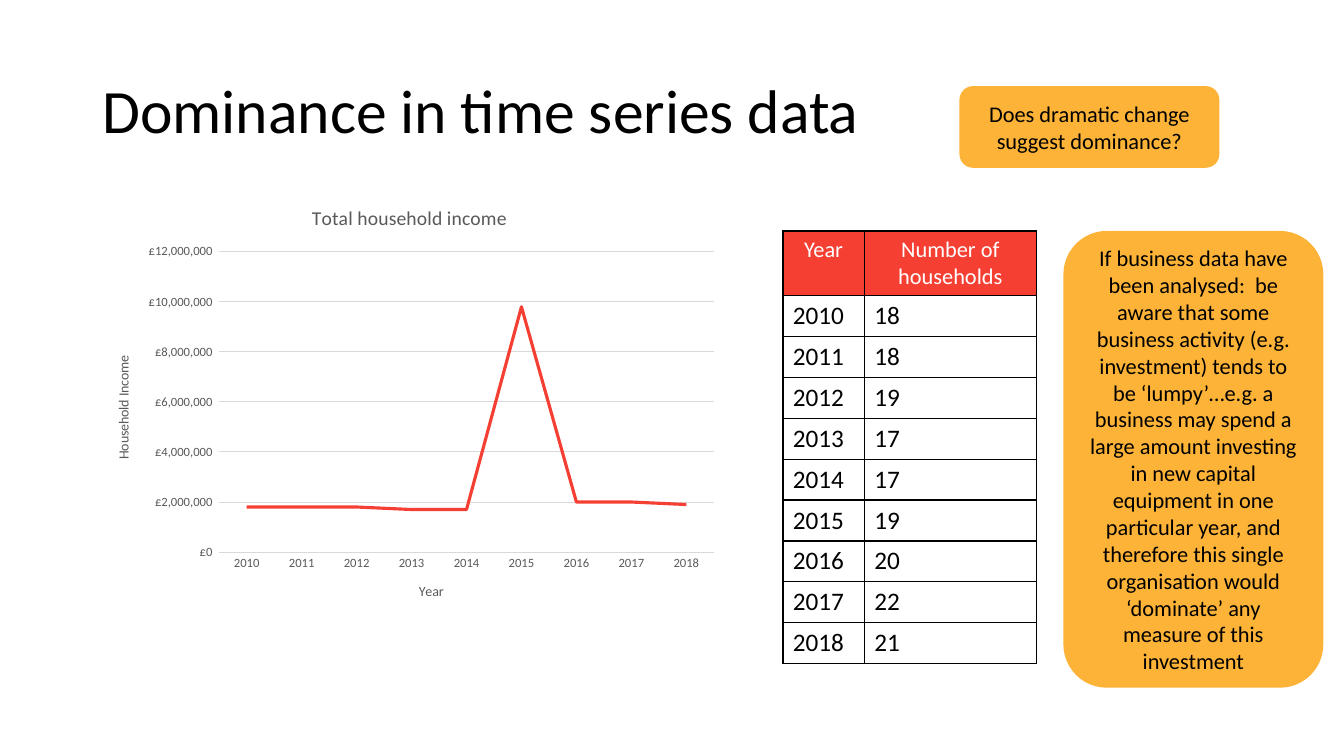
from dataclasses import dataclass

import pptx
import pptx.chart.data
import pptx.dml.color
import pptx.enum.chart
import pptx.enum.shapes
import pptx.enum.text
import pptx.oxml
import pptx.oxml.ns
import pptx.util
from pptx.util import Cm

RGB = pptx.dml.color.RGBColor.from_string
Pt = pptx.util.Pt
PP_ALIGN = pptx.enum.text.PP_ALIGN
MIDDLE = pptx.enum.text.MSO_ANCHOR.MIDDLE
NO_TICKS = pptx.enum.chart.XL_TICK_MARK.NONE


@dataclass(frozen=True)
class Theme:
    font: str = "Calibri"
    ink: str = "000000"
    paper: str = "FFFFFF"
    red: str = "F53F33"
    amber: str = "FDB338"
    grey: str = "595959"
    grid: str = "D9D9D9"
    heading: int = 44
    body: int = 18
    note: int = 16
    chart_title: int = 14
    axis_title: int = 10
    axis_label: int = 9


theme = Theme()


def style(font, size, color):
    font.name = theme.font
    font.size = Pt(size)
    font.bold = False
    font.color.rgb = RGB(color)


def write(frame, text, size, color, align=PP_ALIGN.LEFT):
    """Put one styled run into the first paragraph of a text frame."""
    paragraph = frame.paragraphs[0]
    paragraph.alignment = align
    run = paragraph.add_run()
    run.text = text
    style(run.font, size, color)


deck = pptx.Presentation()
deck.slide_width = Cm(33.87)
deck.slide_height = Cm(19.05)
slide = deck.slides.add_slide(deck.slide_layouts[6])

# Heading
heading = slide.shapes.add_textbox(Cm(2.33), Cm(1.02), Cm(29.21), Cm(3.68)).text_frame
heading.word_wrap = True
heading.vertical_anchor = MIDDLE
heading.paragraphs[0].line_spacing = 0.9
write(heading, "Dominance in time series data", theme.heading, theme.ink)

# Income chart
years = [str(year) for year in range(2010, 2019)]
income_data = pptx.chart.data.CategoryChartData()
income_data.categories = years
income_data.add_series(
    "Total household income",
    [1800000, 1800000, 1800000, 1700000, 1700000, 9800000, 2000000, 2000000, 1900000],
)
income = slide.shapes.add_chart(
    pptx.enum.chart.XL_CHART_TYPE.LINE, Cm(2.33), Cm(4.7), Cm(15.98), Cm(10.97), income_data
).chart
style(income.font, theme.axis_title, theme.ink)
income.has_legend = False
income.has_title = True
write(income.chart_title.text_frame, "Total household income",
      theme.chart_title, theme.grey, PP_ALIGN.CENTER)
income.chart_title.include_in_layout = False
income.plots[0].vary_by_categories = False

income_line = income.plots[0].series[0]
income_line.smooth = False
income_line.marker.style = pptx.enum.chart.XL_MARKER_STYLE.NONE
income_line.format.line.color.rgb = RGB(theme.red)
income_line.format.line.width = Pt(2.25)

year_axis, pound_axis = income.category_axis, income.value_axis
for axis, caption in ((year_axis, "Year"), (pound_axis, "Household Income")):
    axis.has_title = True
    write(axis.axis_title.text_frame, caption, theme.axis_title, theme.grey, PP_ALIGN.CENTER)
    axis.major_tick_mark = axis.minor_tick_mark = NO_TICKS
    style(axis.tick_labels.font, theme.axis_label, theme.grey)
pound_axis.minimum_scale = 0
pound_axis.maximum_scale = 12000000
pound_axis.major_unit = 2000000
pound_axis.tick_labels.number_format = '"£"#,##0_);[Red]\\("£"#,##0\\)'
pound_axis.tick_labels.number_format_is_linked = False
pound_axis.format.line.fill.background()
for line in (year_axis.format.line, pound_axis.major_gridlines.format.line):
    line.color.rgb = RGB(theme.grid)
    line.width = Pt(0.75)

plot_area = income.plots[0]._element.getparent()
for layout in plot_area.findall(pptx.oxml.ns.qn("c:layout")):
    plot_area.remove(layout)
plot_area.insert(0, pptx.oxml.parse_xml(
    f'<c:layout {pptx.oxml.ns.nsdecls("c")}><c:manualLayout><c:layoutTarget val="inner"/>'
    '<c:xMode val="edge"/><c:yMode val="edge"/><c:x val="0.2"/><c:y val="0.15"/>'
    '<c:w val="0.78"/><c:h val="0.69"/></c:manualLayout></c:layout>'
))

# Household counts
counts = [18, 18, 19, 17, 17, 19, 20, 22, 21]
rows = [("Year", "Number of households"), *zip(years, map(str, counts))]
households = slide.shapes.add_table(
    len(rows), 2, Cm(19.73), Cm(5.82), Cm(6.39), Cm(10.9)
).table
households.columns[0].width = Cm(2.05)
households.columns[1].width = Cm(4.34)
for r, row in enumerate(rows):
    is_header = r == 0
    households.rows[r].height = Cm(1.63 if is_header else 1.03)
    for c, text in enumerate(row):
        cell = households.cell(r, c)
        if is_header:
            write(cell.text_frame, text, theme.note, theme.paper, PP_ALIGN.CENTER)
        else:
            write(cell.text_frame, text, theme.body, theme.ink)
        borders = cell._tc.get_or_add_tcPr()
        for side in ("lnL", "lnR", "lnT", "lnB"):
            borders.append(pptx.oxml.parse_xml(
                f'<a:{side} {pptx.oxml.ns.nsdecls("a")} w="12700"><a:solidFill>'
                f'<a:srgbClr val="{theme.ink}"/></a:solidFill></a:{side}>'
            ))
        if is_header:
            cell.fill.solid()
            cell.fill.fore_color.rgb = RGB(theme.red)
        else:
            cell.fill.background()

# Amber notes
notes = [
    (24.18, 2.17, 2.06, "Does dramatic change suggest dominance?"),
    (26.8, 5.82, 11.51,
     "If business data have been analysed:  be aware that some business activity "
     "(e.g. investment) tends to be ‘lumpy’…e.g. a business may spend a large amount "
     "investing in new capital equipment in one particular year, and therefore this "
     "single organisation would ‘dominate’ any measure of this investment"),
]
for left, top, height, text in notes:
    note = slide.shapes.add_shape(
        pptx.enum.shapes.MSO_SHAPE.ROUNDED_RECTANGLE, Cm(left), Cm(top), Cm(6.55), Cm(height)
    )
    note.shadow.inherit = False
    note.fill.solid()
    note.fill.fore_color.rgb = RGB(theme.amber)
    note.line.fill.background()
    note.text_frame.word_wrap = True
    note.text_frame.vertical_anchor = MIDDLE
    write(note.text_frame, text, theme.note, theme.ink, PP_ALIGN.CENTER)

deck.save("out.pptx")
